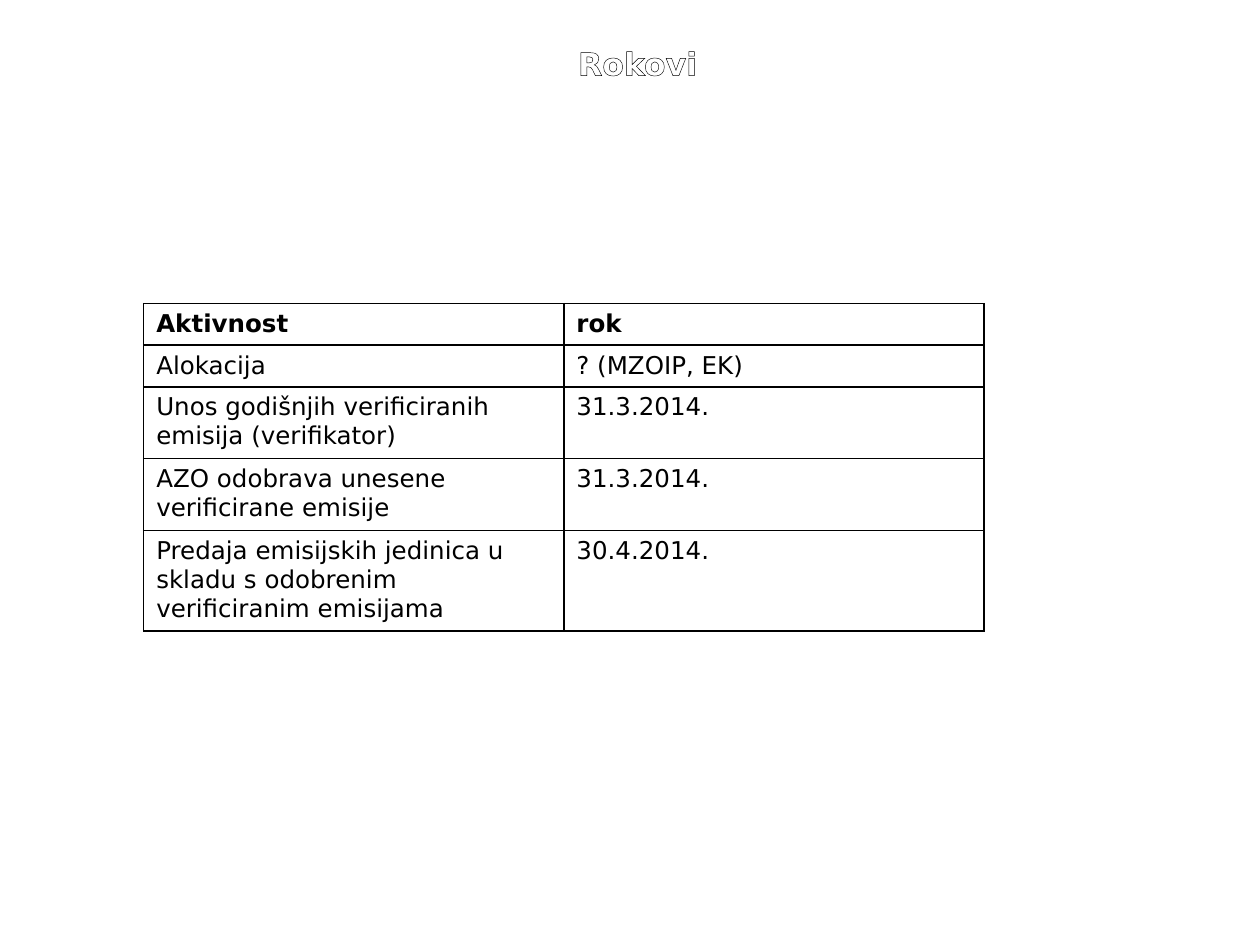
from lxml.etree import SubElement
from pptx import Presentation
from pptx.dml.color import RGBColor
from pptx.enum.text import MSO_ANCHOR, PP_ALIGN
from pptx.oxml.ns import qn
from pptx.util import Inches, Pt


def style_font(font, size, color, bold):
    font.name = "DejaVu Sans"
    font.size = Pt(size)
    font.bold = bold
    font.color.rgb = RGBColor.from_string(color)


def add_line(parent, tag, color):
    line = SubElement(parent, qn(tag), w=str(Pt(1)))
    fill = SubElement(line, qn("a:solidFill"))
    SubElement(fill, qn("a:srgbClr"), val=color)
    return line


prs = Presentation()
prs.slide_width, prs.slide_height = Inches(10), Inches(7.5)
slide = prs.slides.add_slide(prs.slide_layouts[5])

title = slide.shapes.title
title.left, title.top = Inches(0.12), Inches(0.3)
title.width, title.height = Inches(9.88), Inches(0.79)
title.text_frame.text = "Rokovi"
title.text_frame.vertical_anchor = MSO_ANCHOR.TOP
heading = title.text_frame.paragraphs[0]
heading.alignment = PP_ALIGN.CENTER
heading_run = heading.runs[0]
style_font(heading_run.font, 18, "FFFFFF", True)
run_props = heading_run.font._element
run_props.insert(0, add_line(run_props, "a:ln", "000000"))

deadlines = [
    ("Aktivnost", "rok"),
    ("Alokacija", "? (MZOIP, EK)"),
    ("Unos godišnjih verificiranih emisija (verifikator)", "31.3.2014."),
    ("AZO odobrava unesene verificirane emisije", "31.3.2014."),
    ("Predaja emisijskih jedinica u skladu s odobrenim verificiranim emisijama",
     "30.4.2014."),
]
row_heights = [0.33, 0.33, 0.57, 0.57, 0.8]

table = slide.shapes.add_table(
    len(deadlines), 2, Inches(1.14), Inches(2.41), Inches(6.67), Inches(2.6)
).table
table.first_row = False
table.horz_banding = False

for row_index, (entries, height) in enumerate(zip(deadlines, row_heights)):
    table.rows[row_index].height = Inches(height)
    for column_index, entry in enumerate(entries):
        cell = table.cell(row_index, column_index)
        cell.margin_left = cell.margin_right = Inches(0.1)
        cell.margin_top = cell.margin_bottom = Inches(0.05)
        cell.vertical_anchor = MSO_ANCHOR.TOP
        cell.text_frame.text = entry
        style_font(cell.text_frame.paragraphs[0].runs[0].font, 14, "000000", row_index == 0)
        cell_props = cell._tc.get_or_add_tcPr()
        for side in ("a:lnL", "a:lnR", "a:lnT", "a:lnB"):
            add_line(cell_props, side, "000000")
        cell.fill.background()

prs.save("out.pptx")
